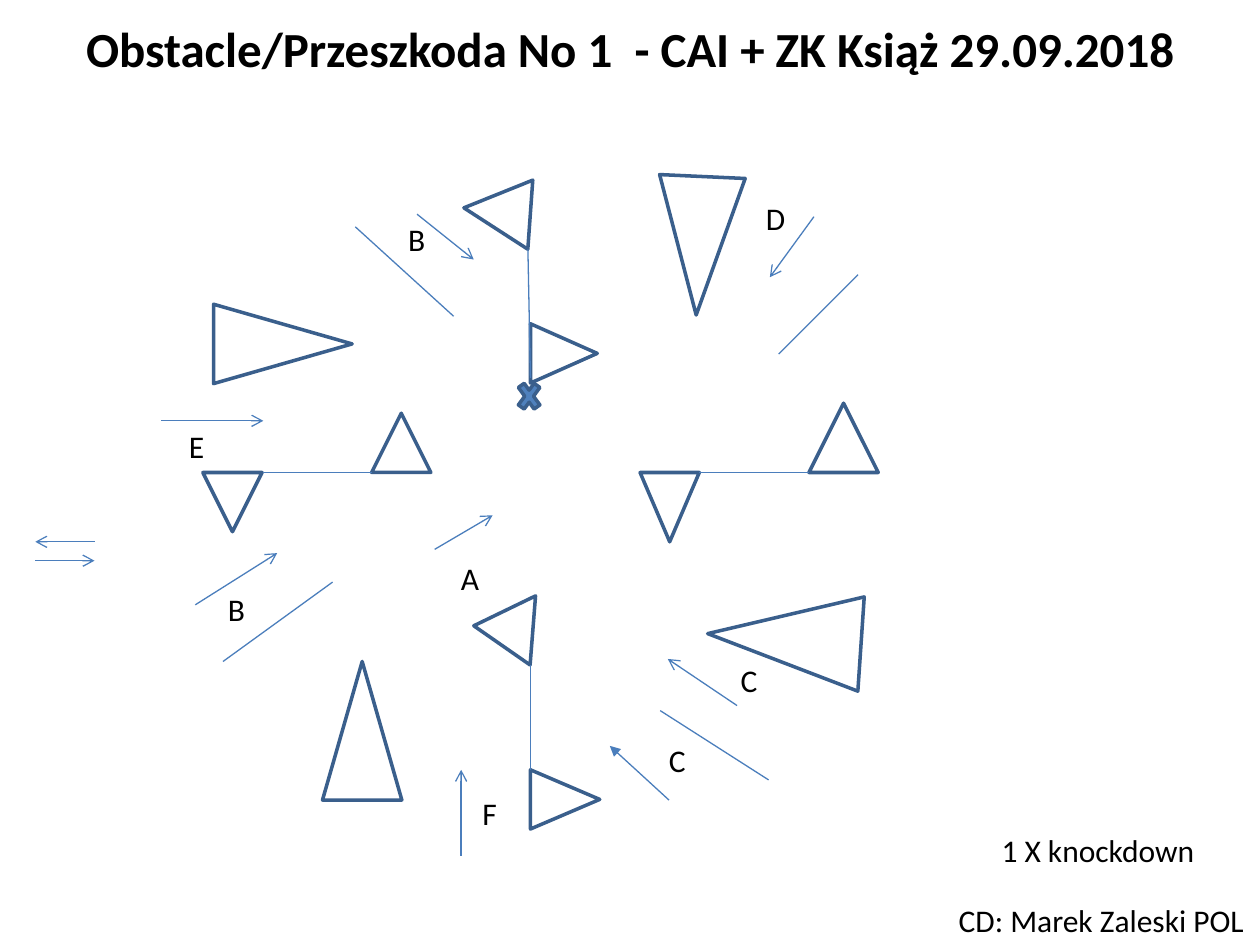
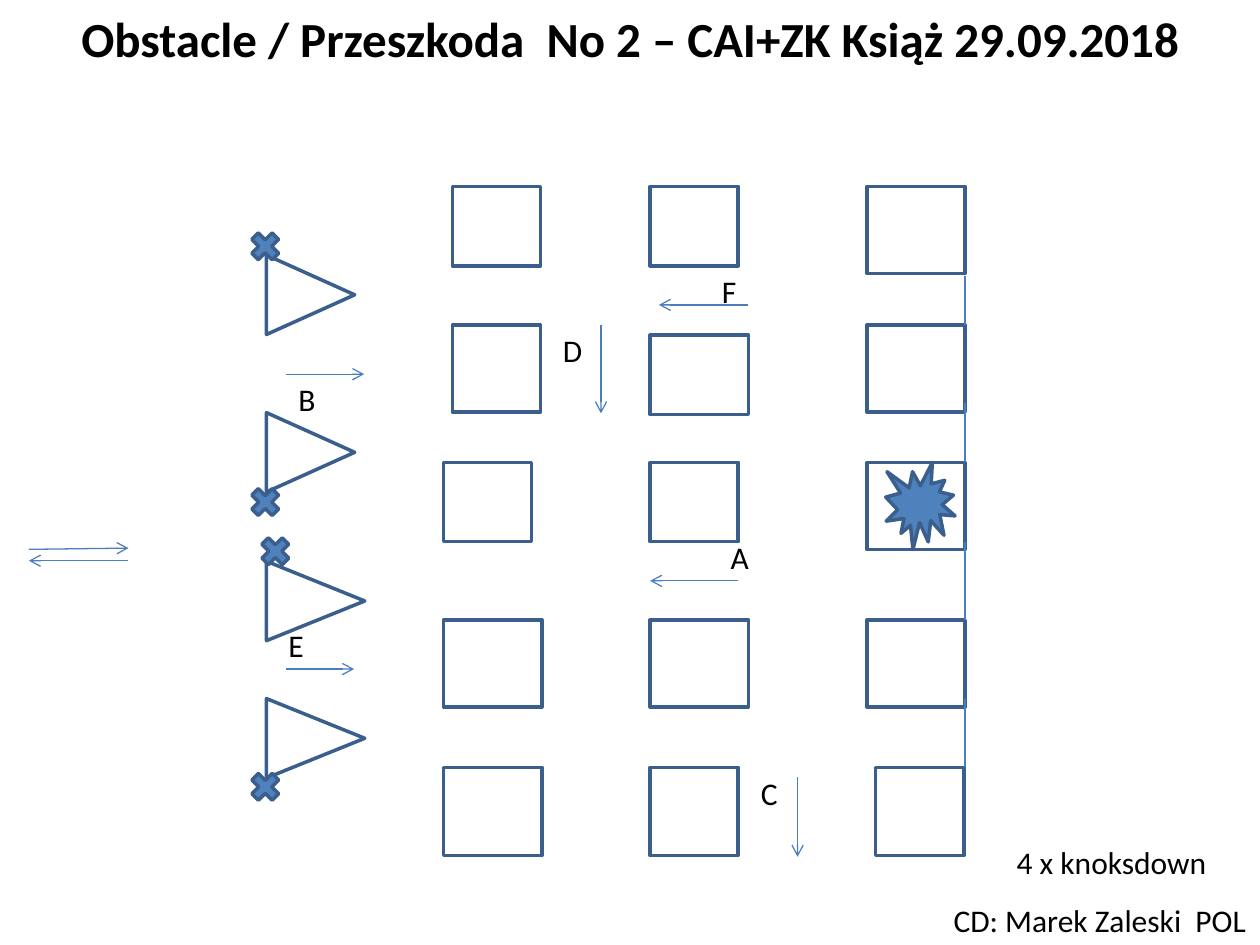
from typing import NamedTuple

from lxml.etree import SubElement
from pptx import Presentation
from pptx.dml.color import RGBColor
from pptx.enum.shapes import MSO_CONNECTOR, MSO_SHAPE
from pptx.enum.text import MSO_ANCHOR, MSO_AUTO_SIZE, PP_ALIGN
from pptx.oxml.ns import qn
from pptx.util import Inches, Pt

COLUMNS, ROWS = 100, 75
WIDTH, HEIGHT = Inches(10), Inches(7.5)
FONT = "Calibri"
BLACK = RGBColor(0x00, 0x00, 0x00)
BLUE = RGBColor(0x4F, 0x81, 0xBD)
OUTLINE = RGBColor(0x3A, 0x5F, 0x8C)
LINE = RGBColor(0x4B, 0x7E, 0xBC)
LABEL_ROWS = 4


class Element(NamedTuple):
    """An outlined course element, placed in grid columns and rows."""
    left: float
    top: float
    width: float
    height: float
    rotation: float = 0
    kind: MSO_SHAPE = MSO_SHAPE.ISOSCELES_TRIANGLE
    filled: bool = False
    apex: float = 0.5


class Path(NamedTuple):
    """A straight line between two grid points, with an optional arrowhead."""
    x1: float
    y1: float
    x2: float
    y2: float
    head: str = ""


class Label(NamedTuple):
    """A line of text at a grid point."""
    text: str
    left: float
    top: float
    width: float = 3.4


class Obstacle(NamedTuple):
    """Everything that is drawn on one obstacle slide."""
    title: str
    title_rows: float
    elements: list[Element]
    paths: list[Path]
    labels: list[Label]


def col(n: float) -> int:
    """Return the length of n grid columns."""
    return int(WIDTH * n / COLUMNS)


def row(n: float) -> int:
    """Return the length of n grid rows."""
    return int(HEIGHT * n / ROWS)


def arrow(x1: float, y1: float, x2: float, y2: float) -> Path:
    """Return a path with an open arrowhead."""
    return Path(x1, y1, x2, y2, "arrow")


def knockdown(left: float, top: float, width: float = 3.1, height: float = 3.1) -> Element:
    """Return the cross that marks a knockdown ball."""
    return Element(left, top, width, height, 0, MSO_SHAPE.MATH_MULTIPLY, True)


def add_title(s, text: str, rows: float) -> None:
    """Fill the title placeholder across the top of the slide."""
    sp = s.shapes.title
    sp.left, sp.top, sp.width, sp.height = 0, 0, WIDTH, row(rows)
    tf = sp.text_frame
    tf.text = text
    tf.vertical_anchor = MSO_ANCHOR.MIDDLE
    p = tf.paragraphs[0]
    p.alignment = PP_ALIGN.CENTER
    p.font.name, p.font.size, p.font.bold = FONT, Pt(28), True
    p.font.color.rgb = BLACK


def add_element(s, e: Element) -> None:
    """Draw one outlined shape."""
    sp = s.shapes.add_shape(e.kind, col(e.left), row(e.top), col(e.width), row(e.height))
    sp.rotation = e.rotation
    sp.shadow.inherit = False
    if e.kind == MSO_SHAPE.ISOSCELES_TRIANGLE:
        sp.adjustments[0] = e.apex
    if e.filled:
        sp.fill.solid()
        sp.fill.fore_color.rgb = BLUE
    else:
        sp.fill.background()
    sp.line.color.rgb = OUTLINE
    sp.line.width = Pt(2)


def add_path(s, path: Path) -> None:
    """Draw one straight connector."""
    c = s.shapes.add_connector(MSO_CONNECTOR.STRAIGHT, col(path.x1), row(path.y1),
                               col(path.x2), row(path.y2))
    c.line.color.rgb = LINE
    c.line.width = Pt(0.75)
    if path.head:
        SubElement(c.line._get_or_add_ln(), qn("a:tailEnd"), type=path.head)
    SubElement(c._element.spPr, qn("a:effectLst"))


def add_label(s, label: Label) -> None:
    """Write one unwrapped text box."""
    sp = s.shapes.add_textbox(col(label.left), row(label.top), col(label.width), row(LABEL_ROWS))
    tf = sp.text_frame
    tf.word_wrap = False
    tf.auto_size = MSO_AUTO_SIZE.SHAPE_TO_FIT_TEXT
    p = tf.paragraphs[0]
    p.text = label.text
    p.font.name, p.font.size = FONT, Pt(18)
    p.font.color.rgb = BLACK


def add_obstacle(prs, obstacle: Obstacle) -> None:
    """Add a slide and draw an obstacle on it."""
    s = prs.slides.add_slide(prs.slide_layouts[5])
    add_title(s, obstacle.title, obstacle.title_rows)
    for element in obstacle.elements:
        add_element(s, element)
    for path in obstacle.paths:
        add_path(s, path)
    for label in obstacle.labels:
        add_label(s, label)


GATE_ROW = 37.5
STAR = Obstacle(
    "Obstacle/Przeszkoda No 1  - CAI + ZK Książ 29.09.2018", 7.6,
    [
        Element(16.1, GATE_ROW, 4.7, 4.7, 180),
        Element(50.8, GATE_ROW, 4.7, 5.5, 180),
        Element(29.5, GATE_ROW - 4.7, 4.7, 4.7),
        Element(64.2, GATE_ROW - 5.5, 5.5, 5.5),
        Element(42.4, 25.4, 4.7, 5.3, 90),
        Element(36.7, 14.2, 5.5, 5.3, 274.1, apex=0.53),
        Element(42.5, 60.7, 4.7, 5.5, 90),
        Element(37.2, 47.5, 5.5, 4.7, 274.5),
        Element(52.1, 14, 6.8, 11, 182.6),
        Element(58.5, 44.6, 7.5, 12.2, 273.9),
        Element(25.6, 52.5, 6.3, 11),
        Element(19.3, 21.8, 6.3, 11, 90),
        knockdown(40.8, 29.8, 2.4, 3.3),
    ],
    [
        arrow(2.8, 44.5, 7.5, 44.5),
        arrow(7.5, 43, 2.8, 43),
        Path(20.9, GATE_ROW, 29.5, GATE_ROW),
        Path(55.5, GATE_ROW, 64.2, GATE_ROW),
        Path(41.9, 19.8, 42.1, 30),
        Path(42.1, 52.8, 42.1, 61.1),
        Path(52.4, 56.4, 61, 61.9),
        Path(61.8, 28.1, 68.1, 21.8),
        Path(36, 25.1, 28.2, 18),
        Path(26.4, 46.2, 17.7, 52.5),
        arrow(34.5, 43.6, 39.1, 40.9),
        arrow(33.1, 17, 37.6, 20.6),
        arrow(15.5, 48, 22, 43.9),
        arrow(58.5, 56, 53, 52.3),
        arrow(12.8, 33.4, 20.9, 33.4),
        arrow(64.6, 17.2, 61.1, 22),
        arrow(36.6, 67.9, 36.6, 61.1),
        Path(53.1, 63.5, 48.4, 59.2, "triangle"),
    ],
    [
        Label("A", 35.6, 43.9, 3.5),
        Label("B", 31.4, 17),
        Label("B", 17.1, 46.3),
        Label("C", 57.8, 52),
        Label("C", 52.1, 58.3),
        Label("D", 59.8, 15.3, 3.6),
        Label("E", 14, 33.4, 3.2),
        Label("F", 37.3, 62.5, 3.2),
        Label("1 X knockdown", 78.5, 65.5, 18.1),
        Label("CD: Marek Zaleski POL", 75.1, 71, 24.9),
    ],
)

BOX_TOPS = [14.8, 25.8, 36.7, 49.2, 60.9]
BOX_COLUMNS = [
    [(35.9, 7, 6.3), (35.9, 7, 6.9), (35.2, 7, 6.3), (35.2, 7.8, 6.9), (35.2, 7.8, 7)],
    [(51.6, 7, 6.3), (51.6, 7.8, 6.3), (51.6, 7, 6.3), (51.6, 7.8, 6.9), (51.6, 7, 7)],
    [(68.8, 7.8, 6.9)] * 4 + [(69.5, 7, 7)],
]
LOWERED_BOX, LOWERED_TOP = (51.6, 7.8, 6.3), 26.6
BOXES = [Element(left, LOWERED_TOP if (left, width, height) == LOWERED_BOX else top,
                 width, height, kind=MSO_SHAPE.RECTANGLE)
         for boxes in BOX_COLUMNS
         for top, (left, width, height) in zip(BOX_TOPS, boxes)]
FENCE_COLUMN = 76.6
FENCE_STARTS = [21.9, 32, 43, 55.5]

BLOCKS = Obstacle(
    "Obstacle / Przeszkoda  No 2 – CAI+ZK Książ 29.09.2018", 6,
    BOXES + [
        Element(21.5, 19.9, 6.3, 7, 90),
        Element(21.5, 32.4, 6.3, 7, 90),
        Element(21.9, 43.8, 6.3, 7.8, 90),
        Element(21.9, 54.7, 6.3, 7.8, 90),
        Element(70.3, 36.7, 5.5, 6.9, 0, MSO_SHAPE.EXPLOSION1, True),
        knockdown(19.5, 18),
        knockdown(19.5, 38.3),
        knockdown(20.3, 42.2),
        knockdown(19.5, 60.9),
    ],
    [Path(FENCE_COLUMN, start, FENCE_COLUMN, end)
     for start, end in zip(FENCE_STARTS, BOX_TOPS[1:])] + [
        arrow(2.3, 43.6, 10.2, 43.5),
        arrow(10.2, 44.5, 2.3, 44.5),
        arrow(58.6, 46.1, 51.6, 46.1),
        arrow(22.7, 29.7, 28.9, 29.7),
        arrow(63.3, 61.7, 63.3, 68),
        arrow(47.7, 25.8, 47.7, 32.8),
        arrow(22.7, 53.1, 28.1, 53.1),
        arrow(59.4, 24.2, 52.3, 24.2),
    ],
    [
        Label("A", 57, 42.2, 3.5),
        Label("B", 22.7, 29.7),
        Label("C", 59.4, 60.9),
        Label("D", 43.7, 25.8, 3.6),
        Label("E", 21.9, 49.2, 3.2),
        Label("F", 56.3, 21.1, 3.2),
        Label("4 x knoksdown", 79.7, 66.4, 17.2),
        Label("CD: Marek Zaleski  POL", 74.7, 71, 25.3),
    ],
)


def main() -> None:
    """Build and save the obstacle slides."""
    prs = Presentation()
    prs.slide_width, prs.slide_height = WIDTH, HEIGHT
    for obstacle in (STAR, BLOCKS):
        add_obstacle(prs, obstacle)
    prs.save("out.pptx")


if __name__ == "__main__":
    main()
